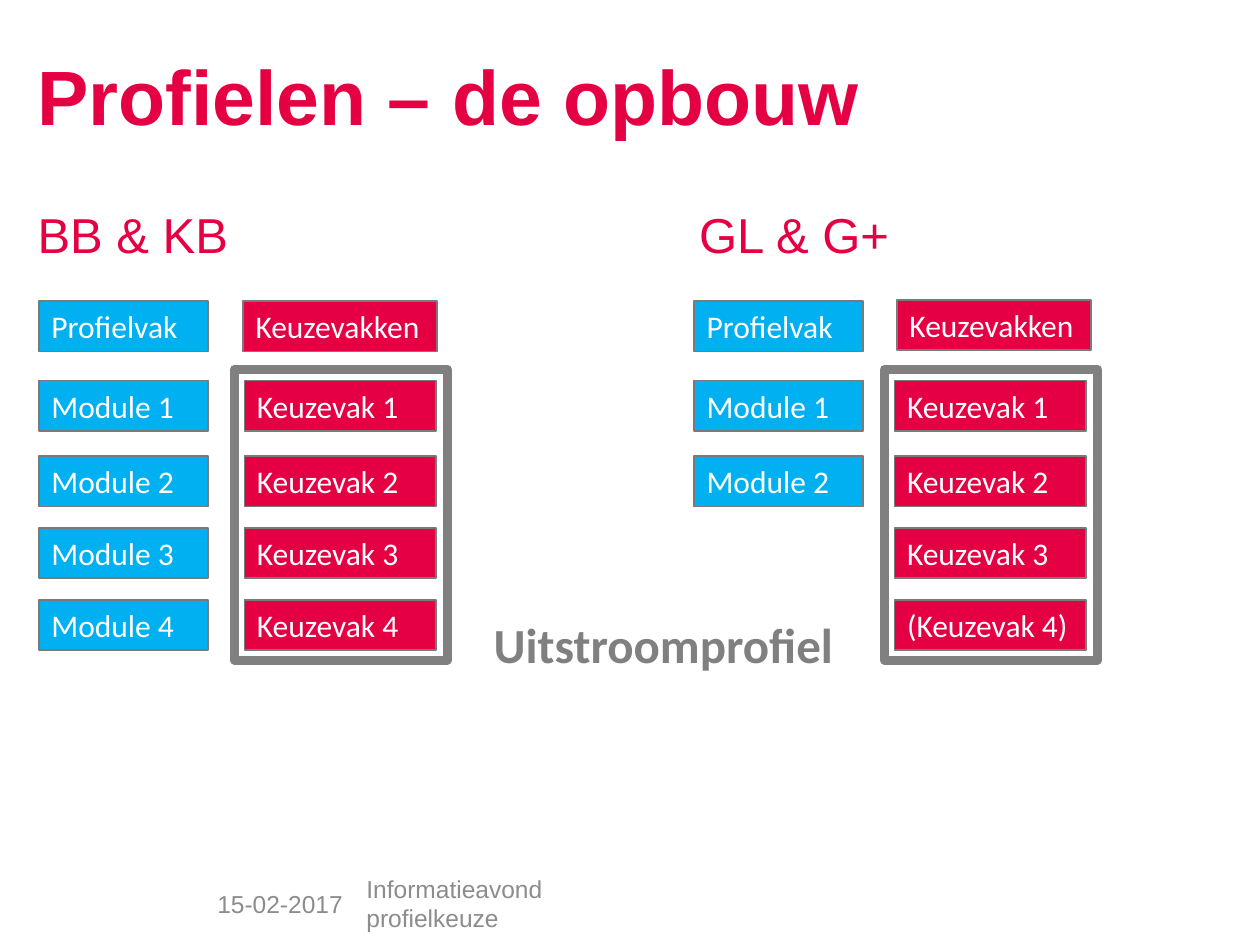
from dataclasses import dataclass

from lxml import etree
from pptx import Presentation
from pptx.dml.color import RGBColor
from pptx.enum import shapes, text
from pptx.oxml.ns import qn
from pptx.util import Inches, Pt


@dataclass(frozen=True)
class Theme:
    """Colours, fonts and type sizes of the slide."""
    red: str = "E50043"
    blue: str = "00B0F0"
    grey: str = "808080"
    edge: str = "7A7A7A"
    pale: str = "8C8C8C"
    white: str = "FFFFFF"
    head: str = "Arial"
    body: str = "Calibri"
    title: int = 44
    sub: int = 28
    cell: int = 18
    foot: int = 14


T = Theme()
TOPS = (0, 0.63, 1.23, 1.8, 2.37)
HIGH = 0.4


def apply(item, values):
    """Set each attribute in values on item."""
    for name, value in values.items():
        setattr(item, name, value)


def write(shape, words, face, size, colour, bold=False, frame=None, para=None):
    """Put one formatted paragraph in a shape and return it."""
    apply(shape.text_frame, {"word_wrap": True,
                             "vertical_anchor": text.MSO_ANCHOR.TOP, **(frame or {})})
    line = shape.text_frame.paragraphs[0]
    apply(line, {"alignment": text.PP_ALIGN.LEFT, **(para or {})})
    run = line.add_run()
    run.text = words
    apply(run.font, {"name": face, "size": Pt(size), "bold": bold})
    run.font.color.rgb = RGBColor.from_string(colour)
    return line


def label(slide, box, *args, **formats):
    """Add a text box and return its paragraph."""
    shape = slide.shapes.add_textbox(*map(Inches, box))
    return write(shape, *args, **formats)


def rect(slide, box, fill, edge, width):
    """Add a rectangle, hollow when fill is None."""
    shape = slide.shapes.add_shape(shapes.MSO_SHAPE.RECTANGLE, *map(Inches, box))
    shape.shadow.inherit = False
    if fill:
        shape.fill.solid()
        shape.fill.fore_color.rgb = RGBColor.from_string(fill)
    else:
        shape.fill.background()
    shape.line.color.rgb = RGBColor.from_string(edge)
    shape.line.width = Pt(width)
    return shape


def cell(slide, box, words, fill):
    """Add a filled rectangle with white text."""
    write(rect(slide, box, fill, T.edge, 1), words, T.body, T.cell, T.white,
          frame={"auto_size": text.MSO_AUTO_SIZE.SHAPE_TO_FIT_TEXT})


def panel(slide, left, top, gap, head, modules, choices):
    """Add a module column and a framed choice column with their headers."""
    right = left + gap
    for drop, words in zip(TOPS, ["Profielvak", *modules]):
        cell(slide, (left, top + drop, 1.34, HIGH), words, T.blue)
    cell(slide, (right + head[0], top + head[1], 1.54, HIGH), "Keuzevakken", T.red)
    for drop, words in zip(TOPS[1:], choices):
        cell(slide, (right, top + drop, 1.52, HIGH), words, T.red)
    rect(slide, (right - 0.08, top + 0.54, 1.69, 2.31), None, T.grey, 5)


def header(slide, left, top, width):
    """Add the title and the two group names on one tabbed line."""
    label(slide, (left, top, width, 0.78), "Profielen – de opbouw",
          T.head, T.title, T.red, bold=True,
          frame={"vertical_anchor": text.MSO_ANCHOR.MIDDLE},
          para={"line_spacing": 0.9})
    line = label(slide, (left, top + 1.22, width, 0.56), "BB & KB\tGL & G+",
                 T.head, T.sub, T.red,
                 para={"line_spacing": 0.9, "space_after": Pt(6)})
    tabs = etree.SubElement(line._p.get_or_add_pPr(), qn("a:tabLst"))
    etree.SubElement(tabs, qn("a:tab"), pos=str(Inches(5.25)), algn="l")


def footer(slide, left, top):
    """Add the date and the name of the event."""
    frame = {"vertical_anchor": text.MSO_ANCHOR.MIDDLE}
    label(slide, (left, top, 1.29, HIGH), "15-02-2017", T.head, T.foot, T.pale,
          frame=frame, para={"alignment": text.PP_ALIGN.RIGHT})
    label(slide, (left + 1.28, top, 2.7, HIGH), "Informatieavond profielkeuze",
          T.head, T.foot, T.pale, frame={**frame, "margin_right": Inches(0.25)})


def main():
    """Build and save the slide."""
    deck = Presentation()
    apply(deck, {"slide_width": Inches(10), "slide_height": Inches(7.5)})
    slide = deck.slides.add_slide(deck.slide_layouts[6])
    header(slide, 0.2, 0.41, 9.12)
    modules = [f"Module {n}" for n in range(1, 5)]
    choices = [f"Keuzevak {n}" for n in range(1, 5)]
    panel(slide, 0.31, 2.39, 1.63, (-0.01, 0), modules, choices)
    panel(slide, 5.51, 2.39, 1.59, (0.02, -0.01), modules[:2],
          [*choices[:3], f"({choices[3]})"])
    label(slide, (3.82, 4.83, 3.35, 0.57), "Uitstroomprofiel",
          T.body, T.sub, T.grey, bold=True,
          frame={"auto_size": text.MSO_AUTO_SIZE.SHAPE_TO_FIT_TEXT})
    footer(slide, 1.53, 6.97)
    deck.save("out.pptx")


if __name__ == "__main__":
    main()
